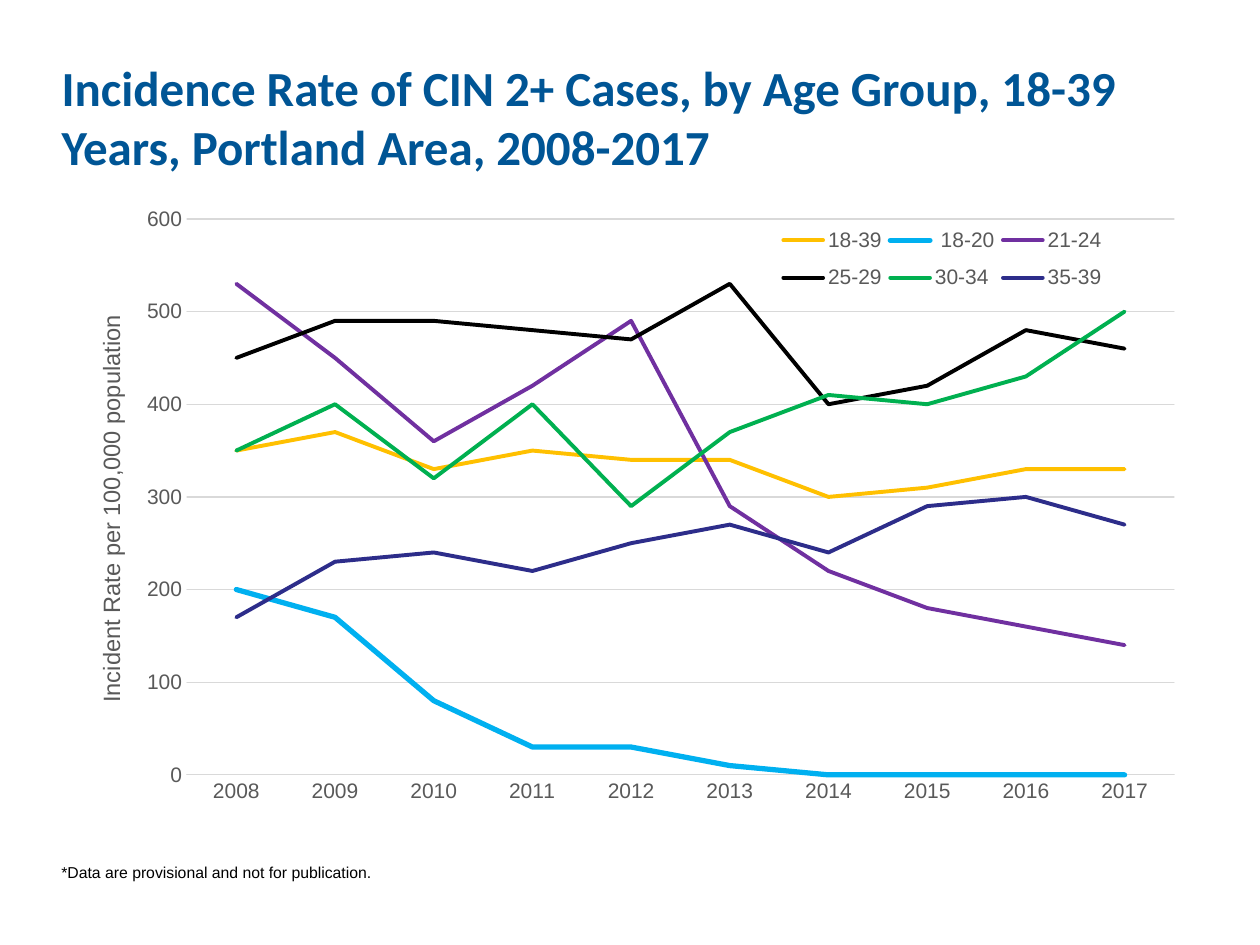
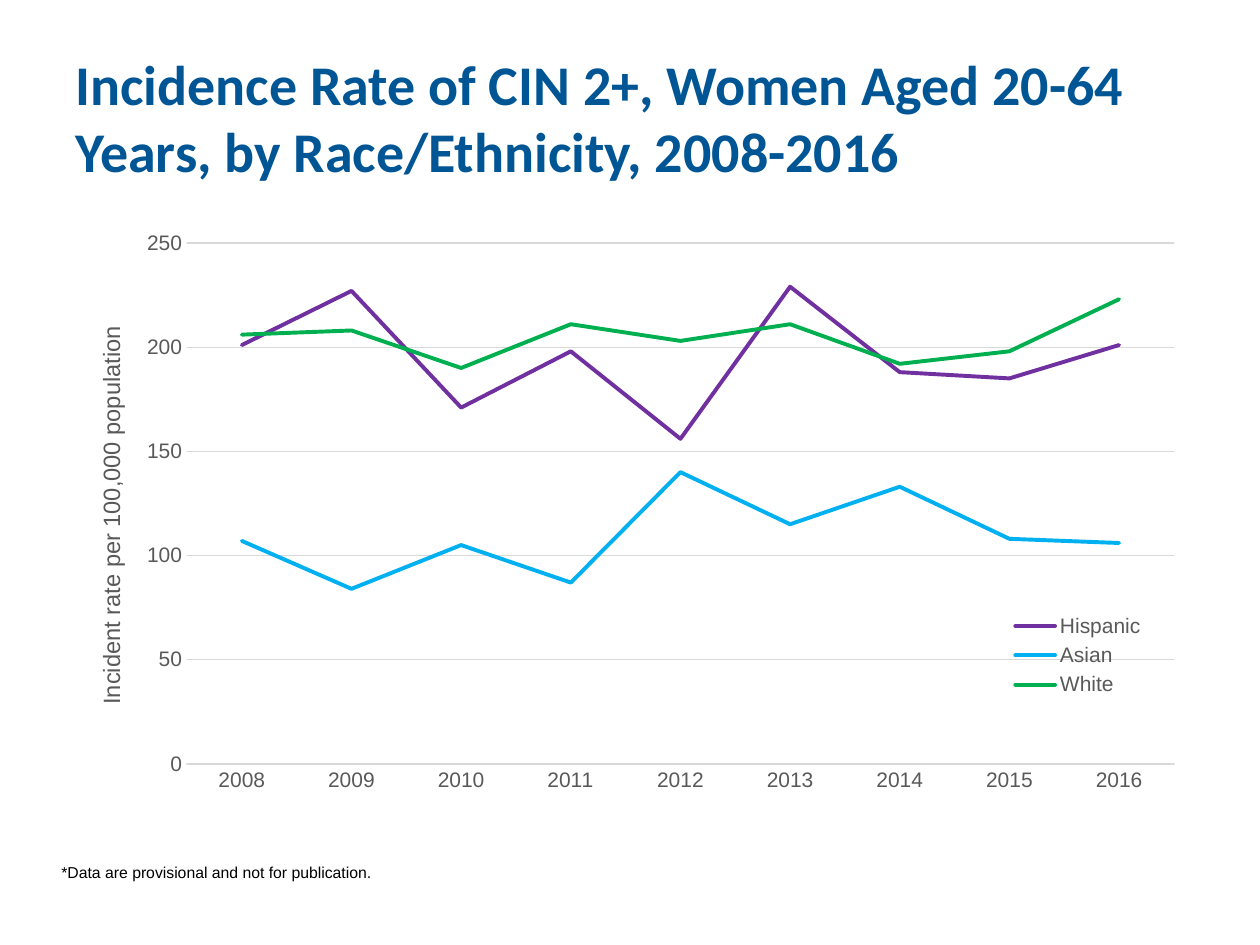
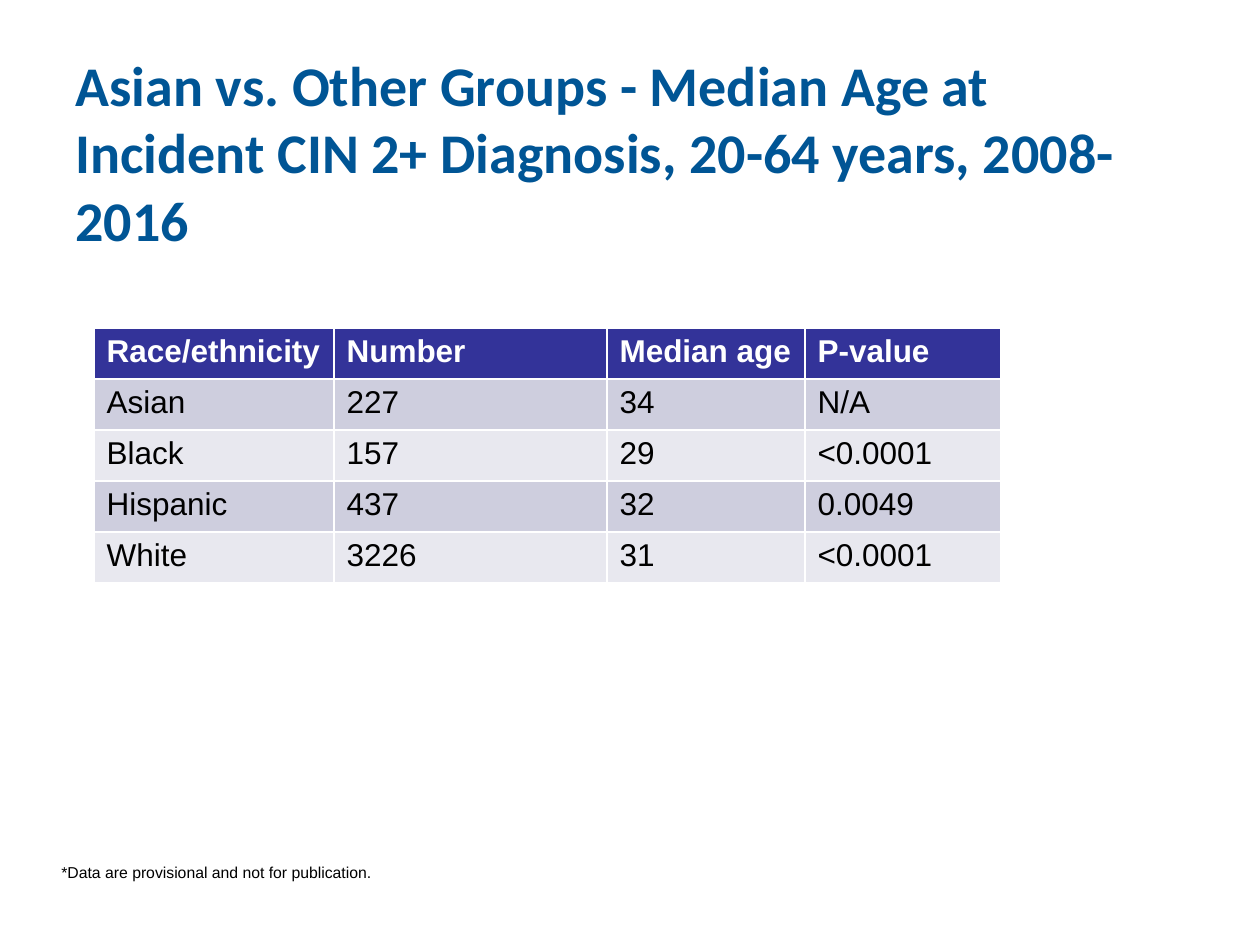
from dataclasses import dataclass

from lxml.etree import SubElement
from pptx import Presentation
from pptx.chart.data import CategoryChartData
from pptx.dml.color import RGBColor
from pptx.enum.chart import XL_CHART_TYPE as ChartType
from pptx.enum.chart import XL_LEGEND_POSITION as LegendPos
from pptx.enum.chart import XL_TICK_MARK as Tick
from pptx.enum.text import MSO_ANCHOR as Anchor
from pptx.enum.text import MSO_AUTO_SIZE as AutoSize
from pptx.enum.text import PP_ALIGN as Align
from pptx.oxml import parse_xml
from pptx.oxml.ns import nsdecls, qn
from pptx.util import Emu, Pt

EMU_PER_PX = 914400 / 126
COLORS = {
    "title": "005595", "text": "000000", "label": "595959", "grid": "D9D9D9",
    "header": "333399", "header_text": "FFFFFF",
    "band_dark": "CECEDE", "band_light": "E8E8EF",
    "gold": "FFC000", "sky": "00B0F0", "purple": "7030A0",
    "black": "000000", "green": "00B050", "navy": "2D2D8A",
}
FOOTNOTE = "*Data are provisional and not for publication."


@dataclass(frozen=True)
class Box:
    x: int
    y: int
    w: int
    h: int

    def emu(self) -> list[Emu]:
        return [px(v) for v in (self.x, self.y, self.w, self.h)]


@dataclass(frozen=True)
class Title:
    text: str
    box: Box
    size: int


@dataclass(frozen=True)
class Line:
    name: str
    color: str
    values: tuple[int, ...]
    width: float = 2.25


@dataclass(frozen=True)
class RateChart:
    box: Box
    plot: Box
    legend: Box
    axis_title: str
    axis_box: Box
    top: int
    step: int
    first_year: int
    lines: tuple[Line, ...]


AGE_CHART = RateChart(
    Box(63, 195, 1134, 620), Box(187, 219, 987, 556), Box(775, 214, 335, 90),
    "Incident Rate per 100,000 population", Box(92, 311, 26, 388),
    600, 100, 2008,
    (
        Line("18-39", "gold", (350, 370, 330, 350, 340, 340, 300, 310, 330, 330)),
        Line(" 18-20", "sky", (200, 170, 80, 30, 30, 10, 0, 0, 0, 0), 3),
        Line("21-24", "purple", (530, 450, 360, 420, 490, 290, 220, 180, 160, 140)),
        Line("25-29", "black", (450, 490, 490, 480, 470, 530, 400, 420, 480, 460)),
        Line("30-34", "green", (350, 400, 320, 400, 290, 370, 410, 400, 430, 500)),
        Line("35-39", "navy", (170, 230, 240, 220, 250, 270, 240, 290, 300, 270)),
    ),
)
RACE_CHART = RateChart(
    Box(63, 220, 1134, 584), Box(187, 243, 987, 521), Box(1008, 608, 140, 95),
    "Incident rate per 100,000 population", Box(92, 322, 26, 378),
    250, 50, 2008,
    (
        Line("Hispanic", "purple", (201, 227, 171, 198, 156, 229, 188, 185, 201)),
        Line("Asian", "sky", (107, 84, 105, 87, 140, 115, 133, 108, 106)),
        Line("White", "green", (206, 208, 190, 211, 203, 211, 192, 198, 223)),
    ),
)
AGE_ROWS = (
    ("Race/ethnicity", "Number", "Median age", "P-value"),
    ("Asian", "227", "34", "N/A"),
    ("Black", "157", "29", "<0.0001"),
    ("Hispanic", "437", "32", "0.0049"),
    ("White", "3226", "31", "<0.0001"),
)
AGE_COLUMNS = (240, 273, 198, 196)
ROW_HEIGHT = 51


def px(value: int) -> Emu:
    return Emu(round(value * EMU_PER_PX))


def rgb(name: str) -> RGBColor:
    return RGBColor.from_string(COLORS[name])


def style_font(font, size: float, color: str, bold: bool = False, name: str = "Arial") -> None:
    font.name, font.size, font.bold = name, Pt(size), bold
    font.color.rgb = rgb(color)


def add_run(p, text: str, size: float, color: str, bold: bool = False, name: str = "Arial") -> None:
    r = p.add_run()
    r.text = text
    style_font(r.font, size, color, bold, name)


def add_slide(prs, title: Title):
    s = prs.slides.add_slide(prs.slide_layouts[5])
    sp = s.shapes.title
    sp.left, sp.top, sp.width, sp.height = title.box.emu()
    tf = sp.text_frame
    tf.word_wrap, tf.auto_size, tf.vertical_anchor = True, AutoSize.NONE, Anchor.MIDDLE
    p = tf.paragraphs[0]
    p.alignment = Align.LEFT
    add_run(p, title.text, title.size, "title", True, "Calibri")
    return s


def add_footnote(s) -> None:
    tf = s.shapes.add_textbox(*Box(49, 857, 829, 31).emu()).text_frame
    tf.word_wrap, tf.auto_size = True, AutoSize.SHAPE_TO_FIT_TEXT
    add_run(tf.paragraphs[0], FOOTNOTE, 9, "text")


def place(element, frame: Box, box: Box, index: int, inner: bool = False) -> None:
    layout = element.find(qn("c:layout"))
    if layout is None:
        layout = parse_xml(f"<c:layout {nsdecls('c')}/>")
        element.insert(index, layout)
    manual = SubElement(layout, qn("c:manualLayout"))
    settings = {"layoutTarget": "inner"} if inner else {}
    settings |= {
        "xMode": "edge", "yMode": "edge",
        "x": (box.x - frame.x) / frame.w, "y": (box.y - frame.y) / frame.h,
        "w": box.w / frame.w, "h": box.h / frame.h,
    }
    for tag, value in settings.items():
        SubElement(manual, qn(f"c:{tag}")).set("val", str(value))


def style_axes(chart, spec_chart: RateChart) -> None:
    years, rates = chart.category_axis, chart.value_axis
    for axis in (years, rates):
        axis.major_tick_mark = axis.minor_tick_mark = Tick.NONE
        style_font(axis.tick_labels.font, 12, "label")
    rates.minimum_scale, rates.maximum_scale = 0, spec_chart.top
    rates.major_unit = spec_chart.step
    rates.has_major_gridlines = True
    rates.format.line.fill.background()
    for line in (years.format.line, rates.major_gridlines.format.line):
        line.color.rgb, line.width = rgb("grid"), Pt(0.75)

    title = rates.axis_title
    add_run(title.text_frame.paragraphs[0], spec_chart.axis_title, 13.5, "label")
    body = title.element.find(f".//{qn('a:bodyPr')}")
    body.set("rot", "-5400000")
    body.set("vert", "horz")
    place(title.element, spec_chart.box, spec_chart.axis_box, 1)


def add_rate_chart(s, rate: RateChart) -> None:
    data = CategoryChartData()
    data.categories = [str(rate.first_year + i) for i in range(len(rate.lines[0].values))]
    for line in rate.lines:
        data.add_series(line.name, line.values)
    chart = s.shapes.add_chart(ChartType.LINE, *rate.box.emu(), data).chart
    style_font(chart.font, 10, "text")
    chart.has_title = False
    chart.plots[0].vary_by_categories = False
    for series, line in zip(chart.plots[0].series, rate.lines):
        series.smooth = False
        series.format.line.color.rgb = rgb(line.color)
        series.format.line.width = Pt(line.width)
    style_axes(chart, rate)

    chart.has_legend = True
    chart.legend.position = LegendPos.CORNER
    chart.legend.include_in_layout = True
    style_font(chart.legend.font, 12, "label")
    place(chart.element.find(f".//{qn('c:legend')}"), rate.box, rate.legend, 1)
    place(chart.element.find(f".//{qn('c:plotArea')}"), rate.box, rate.plot, 0, True)
    for ln in chart.element.iter(qn("a:ln")):
        ln.set("cap", "rnd")


def add_age_table(s) -> None:
    box = Box(94, 328, sum(AGE_COLUMNS), ROW_HEIGHT * len(AGE_ROWS))
    table = s.shapes.add_table(len(AGE_ROWS), len(AGE_COLUMNS), *box.emu()).table
    table.horz_banding = False
    for column, width in zip(table.columns, AGE_COLUMNS):
        column.width = px(width)
    for i, (row, texts) in enumerate(zip(table.rows, AGE_ROWS)):
        row.height = px(ROW_HEIGHT)
        header = i == 0
        fill = "header" if header else "band_dark" if i % 2 else "band_light"
        for cell, text in zip(row.cells, texts):
            cell.fill.solid()
            cell.fill.fore_color.rgb = rgb(fill)
            add_run(cell.text_frame.paragraphs[0], text, 18,
                    "header_text" if header else "text", header)


def main() -> None:
    prs = Presentation()
    prs.slide_width, prs.slide_height = px(1260), px(945)

    s = add_slide(prs, Title(
        "Incidence Rate of CIN 2+ Cases, by Age Group, 18-39 Years, Portland Area, 2008-2017",
        Box(49, 38, 1148, 157), 28))
    add_rate_chart(s, AGE_CHART)
    add_footnote(s)

    s = add_slide(prs, Title(
        "Incidence Rate of CIN 2+, Women Aged 20-64 Years, by Race/Ethnicity, 2008-2016",
        Box(63, 38, 1134, 157), 32))
    add_rate_chart(s, RACE_CHART)
    add_footnote(s)

    s = add_slide(prs, Title(
        "Asian vs. Other Groups - Median Age at Incident CIN 2+ Diagnosis, 20-64 years, 2008-2016",
        Box(63, 73, 1134, 157), 32))
    add_age_table(s)
    add_footnote(s)

    prs.save("out.pptx")


if __name__ == "__main__":
    main()
